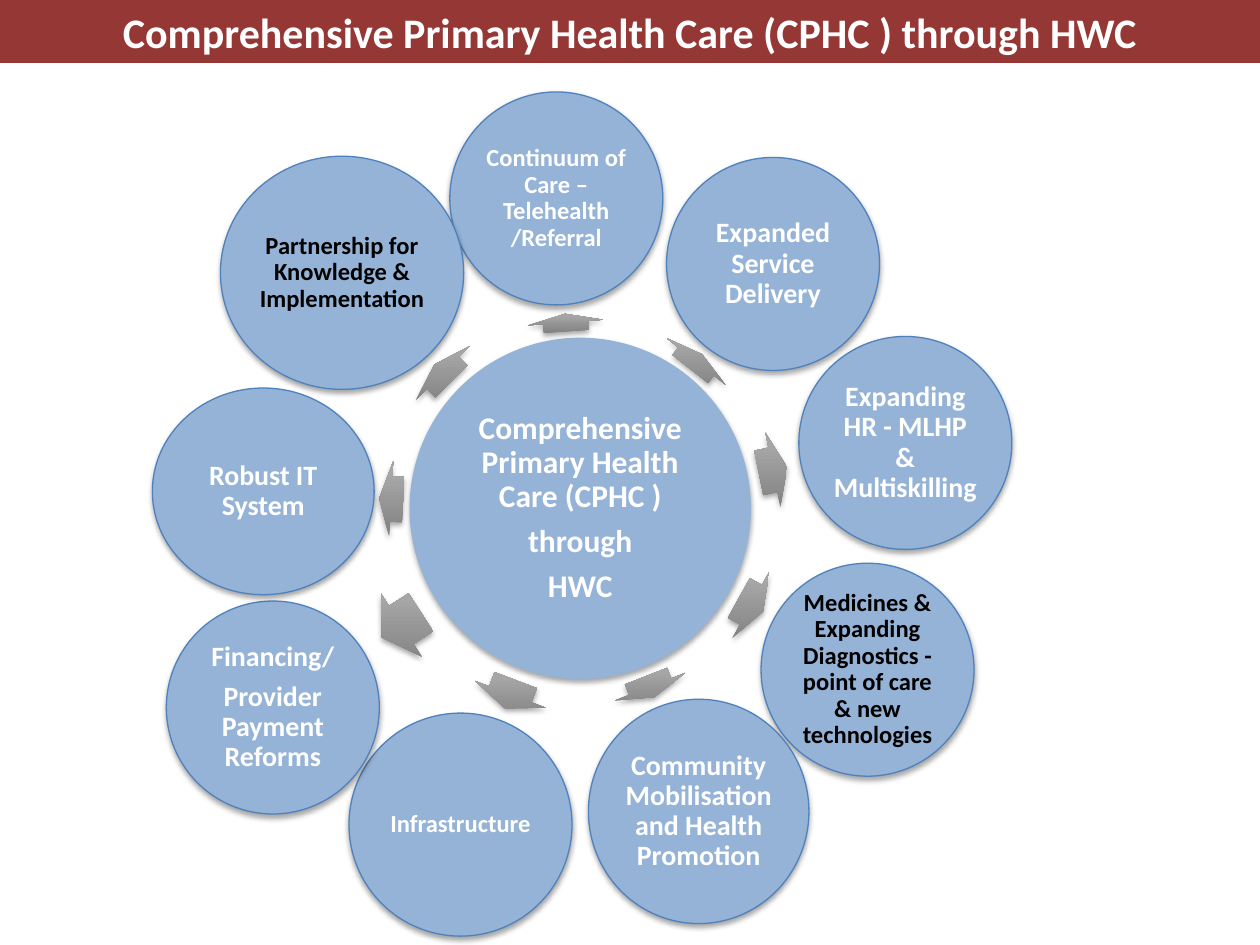
from dataclasses import dataclass

from lxml.etree import fromstring
from pptx import Presentation
from pptx.dml.color import RGBColor
from pptx.enum.shapes import MSO_SHAPE
from pptx.enum.text import MSO_ANCHOR, PP_ALIGN
from pptx.oxml.ns import nsdecls
from pptx.util import Inches, Pt


@dataclass(frozen=True)
class Theme:
    font: str = "Calibri"
    bar: RGBColor = RGBColor(0x95, 0x37, 0x35)
    circle: RGBColor = RGBColor(0x95, 0xB3, 0xD7)
    outline: RGBColor = RGBColor(0x4F, 0x81, 0xBD)
    light: RGBColor = RGBColor(0xFF, 0xFF, 0xFF)
    dark: RGBColor = RGBColor(0, 0, 0)
    arrow_stops: tuple = ((0, "808080"), (80, "A6A6A6"), (100, "A7A7A7"))
    title_size: int = 24
    hub_size: int = 18
    large: int = 16
    small: int = 14


THEME = Theme()
TITLE = "Comprehensive Primary Health Care (CPHC ) through HWC"
HUB = (["Comprehensive Primary Health Care (CPHC )", "through", "HWC"], (3.25, 2.68, 2.71, 2.71))
ARROW_SPAN = 0.6

# Each component: paragraphs, circle box, (arrow left, top, length, rotation), size, colour
COMPONENTS = [
    (["Continuum of Care – Telehealth /Referral"], (3.57, 0.73, 1.69, 1.69),
     (4.42, 2.26, 0.14, 265.7), THEME.small, THEME.light),
    (["Expanded Service Delivery"], (5.29, 1.25, 1.69, 1.69),
     (5.45, 2.57, 0.15, 308.4), THEME.large, THEME.light),
    (["Expanding HR - MLHP & Multiskilling"], (6.34, 2.67, 1.69, 1.69),
     (6.02, 3.43, 0.23, 348.6), THEME.large, THEME.light),
    (["Medicines & Expanding Diagnostics - point of care & new technologies"],
     (6.04, 4.47, 1.69, 1.69), (5.85, 4.5, 0.22, 29.1), THEME.small, THEME.dark),
    (["Community Mobilisation and Health Promotion"], (4.67, 5.55, 1.75, 1.78),
     (5.07, 5.15, 0.18, 68.6), THEME.large, THEME.light),
    (["Infrastructure"], (2.77, 5.66, 1.77, 1.77),
     (3.93, 5.21, 0.24, 110.7), THEME.small, THEME.light),
    (["Financing/", "Provider Payment Reforms"], (1.32, 4.77, 1.69, 1.69),
     (3, 4.66, 0.37, 147.1), THEME.large, THEME.light),
    (["Robust IT System"], (1.21, 3.08, 1.76, 1.64),
     (3.01, 3.66, 0.19, 183.1), THEME.large, THEME.light),
    (["Partnership for Knowledge & Implementation"], (1.75, 1.24, 1.93, 1.85),
     (3.42, 2.66, 0.19, 224.9), THEME.small, THEME.dark),
]


def add_preset(slide, preset, box, fill=None):
    shape = slide.shapes.add_shape(preset, *map(Inches, box))
    shape.shadow.inherit = False
    shape.line.fill.background()
    if fill is not None:
        shape.fill.solid()
        shape.fill.fore_color.rgb = fill
    return shape


def add_shadow(shape):
    effects = shape._element.spPr.find("{*}effectLst")
    effects.append(fromstring(
        f'<a:outerShdw {nsdecls("a")} blurRad="{Pt(3.1)}" dist="{Pt(1.8)}" dir="5400000" '
        'rotWithShape="0"><a:srgbClr val="000000"><a:alpha val="35000"/></a:srgbClr>'
        '</a:outerShdw>'))


def write(shape, paragraphs, size, color):
    frame = shape.text_frame
    frame.word_wrap = True
    frame.vertical_anchor = MSO_ANCHOR.MIDDLE
    frame.text = "\n".join(paragraphs)
    for paragraph in frame.paragraphs:
        paragraph.alignment = PP_ALIGN.CENTER
        paragraph.font.name = THEME.font
        paragraph.font.size = Pt(size)
        paragraph.font.bold = True
        paragraph.font.color.rgb = color
    return frame


def add_circle(slide, paragraphs, box, size, color):
    circle = add_preset(slide, MSO_SHAPE.OVAL, box, THEME.circle)
    add_shadow(circle)
    frame = write(circle, paragraphs, size, color)
    frame.margin_left = frame.margin_right = Inches(0.02)
    frame.margin_top = frame.margin_bottom = Inches(0.02)
    for paragraph in frame.paragraphs:
        paragraph.line_spacing = 0.9
        paragraph.space_after = Pt(0.35 * size)
    return circle


def add_arrow(slide, left, top, length, rotation):
    arrow = add_preset(slide, MSO_SHAPE.RIGHT_ARROW, (left, top, length, ARROW_SPAN))
    arrow.adjustments[0] = 0.6
    arrow.adjustments[1] = 0.5
    arrow.rotation = rotation
    add_shadow(arrow)
    stops = "".join(f'<a:gs pos="{position * 1000}"><a:srgbClr val="{color}"/></a:gs>'
                    for position, color in THEME.arrow_stops)
    arrow._element.spPr.find("{*}prstGeom").addnext(fromstring(
        f'<a:gradFill {nsdecls("a")} rotWithShape="0"><a:gsLst>{stops}</a:gsLst>'
        '<a:lin ang="16200000" scaled="0"/></a:gradFill>'))


def main():
    deck = Presentation()
    deck.slide_width, deck.slide_height = Inches(10), Inches(7.5)
    slide = deck.slides.add_slide(deck.slide_layouts[6])

    hub_text, hub_box = HUB
    add_circle(slide, hub_text, hub_box, THEME.hub_size, THEME.light)
    for paragraphs, box, arrow, size, color in COMPONENTS:
        add_arrow(slide, *arrow)
        circle = add_circle(slide, paragraphs, box, size, color)
        circle.line.color.rgb = THEME.outline
        circle.line.width = Pt(0.75)

    bar = add_preset(slide, MSO_SHAPE.RECTANGLE, (0, 0, 10, 0.5), THEME.bar)
    write(bar, [TITLE], THEME.title_size, THEME.light)
    deck.save("out.pptx")


if __name__ == "__main__":
    main()
